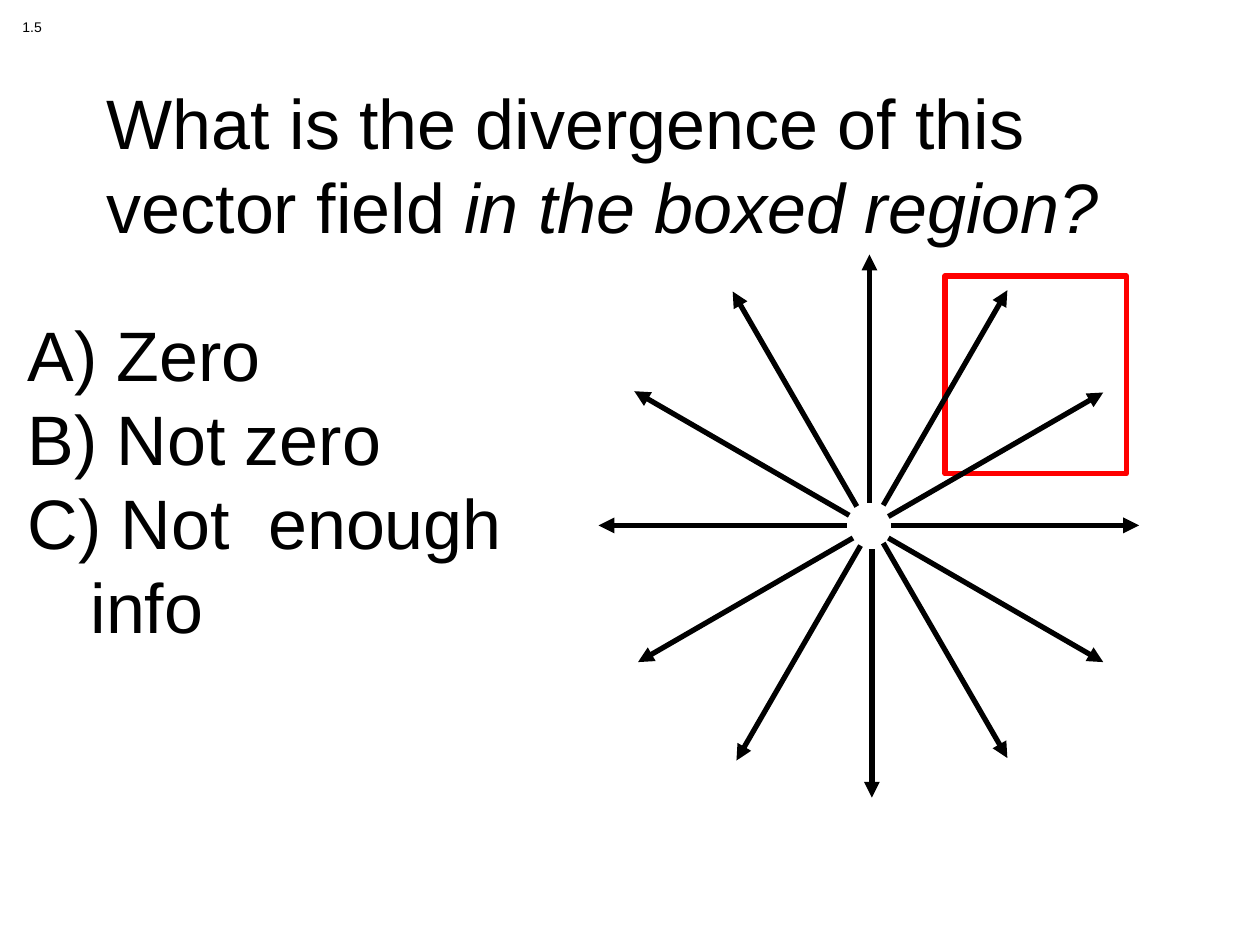
import math
import pptx
import pptx.util
import pptx.dml.color
import pptx.enum.shapes
import pptx.enum.text
from lxml import etree
from pptx.oxml.ns import qn

Inches, Pt = pptx.util.Inches, pptx.util.Pt
COLORS = {"ink": "000000", "box": "FF0000", "back": "FFFFFF"}
FONT = "Arial"


def color(name):
    return pptx.dml.color.RGBColor.from_string(COLORS[name])


def style(run, size):
    run.font.name = FONT
    run.font.size = Pt(size)
    run.font.color.rgb = color("ink")


def add_text(slide, box, lines, size):
    """Place a wrapped text box with one paragraph per line."""
    frame = slide.shapes.add_textbox(*map(Inches, box)).text_frame
    frame.word_wrap = True
    frame.text = "\n".join(lines)
    for par in frame.paragraphs:
        for run in par.runs:
            style(run, size)
    return frame


def add_title(slide, box):
    frame = add_text(slide, box, ["What is the divergence of this vector field "], 40)
    frame.vertical_anchor = pptx.enum.text.MSO_ANCHOR.MIDDLE
    run = frame.paragraphs[0].add_run()
    run.text = "in the boxed region?"
    style(run, 40)
    run.font.italic = True


def add_choices(slide, box):
    frame = add_text(slide, box, [" Zero", " Not zero", " Not  enough info"], 40)
    for par in frame.paragraphs:
        # Lettered list with a hanging indent
        props = par._p.get_or_add_pPr()
        props.set("marL", str(Inches(0.5)))
        props.set("indent", str(-Inches(0.5)))
        etree.SubElement(props, qn("a:buFont"), typeface=FONT)
        etree.SubElement(props, qn("a:buAutoNum"), type="alphaUcParenR")


def add_region(slide, box):
    rect = slide.shapes.add_shape(
        pptx.enum.shapes.MSO_SHAPE.RECTANGLE, *map(Inches, box))
    rect.shadow.inherit = False
    rect.fill.background()
    rect.line.color.rgb = color("box")
    rect.line.width = Pt(3)


def add_field(slide, box):
    """Draw equal arrows, 30 degrees apart, out from the middle of the box."""
    left, top, width, height = box
    mid_x, mid_y = left + width / 2, top + height / 2
    length = 1.97
    # Tail offsets from the middle, counterclockwise from the right
    tails = [(0.17, 0), (0.15, -0.07), (0.11, -0.16), (0, -0.18),
             (-0.1, -0.15), (-0.16, -0.08), (-0.18, 0), (-0.13, 0.1),
             (-0.07, 0.16), (0.02, 0.19), (0.11, 0.14), (0.15, 0.1)]
    group = slide.shapes.add_group_shape()
    for step, (dx, dy) in enumerate(tails):
        angle = math.radians(30 * step)
        x, y = mid_x + dx, mid_y + dy
        arrow = group.shapes.add_connector(
            pptx.enum.shapes.MSO_CONNECTOR.STRAIGHT,
            Inches(x), Inches(y),
            Inches(x + length * math.cos(angle)),
            Inches(y - length * math.sin(angle)))
        arrow.line.color.rgb = color("ink")
        arrow.line.width = Pt(3)
        etree.SubElement(arrow.line._get_or_add_ln(), qn("a:tailEnd"), type="triangle")
        etree.SubElement(arrow._element.spPr, qn("a:effectLst"))


def main():
    deck = pptx.Presentation()
    deck.slide_width, deck.slide_height = Inches(10), Inches(7.5)
    slide = deck.slides.add_slide(deck.slide_layouts[6])
    slide.background.fill.solid()
    slide.background.fill.fore_color.rgb = color("back")

    # Question, boxed region, answers, number and vector field
    add_title(slide, (0.75, 0.67, 8.5, 1.25))
    add_region(slide, (7.5, 2.19, 1.44, 1.57))
    add_choices(slide, (0.12, 2.42, 4.75, 2.77))
    add_text(slide, (0.08, 0.1, 0.39, 0.23), ["1.5"], 8)
    add_field(slide, (4.75, 2.02, 4.3, 4.3))
    deck.save("out.pptx")


if __name__ == "__main__":
    main()
